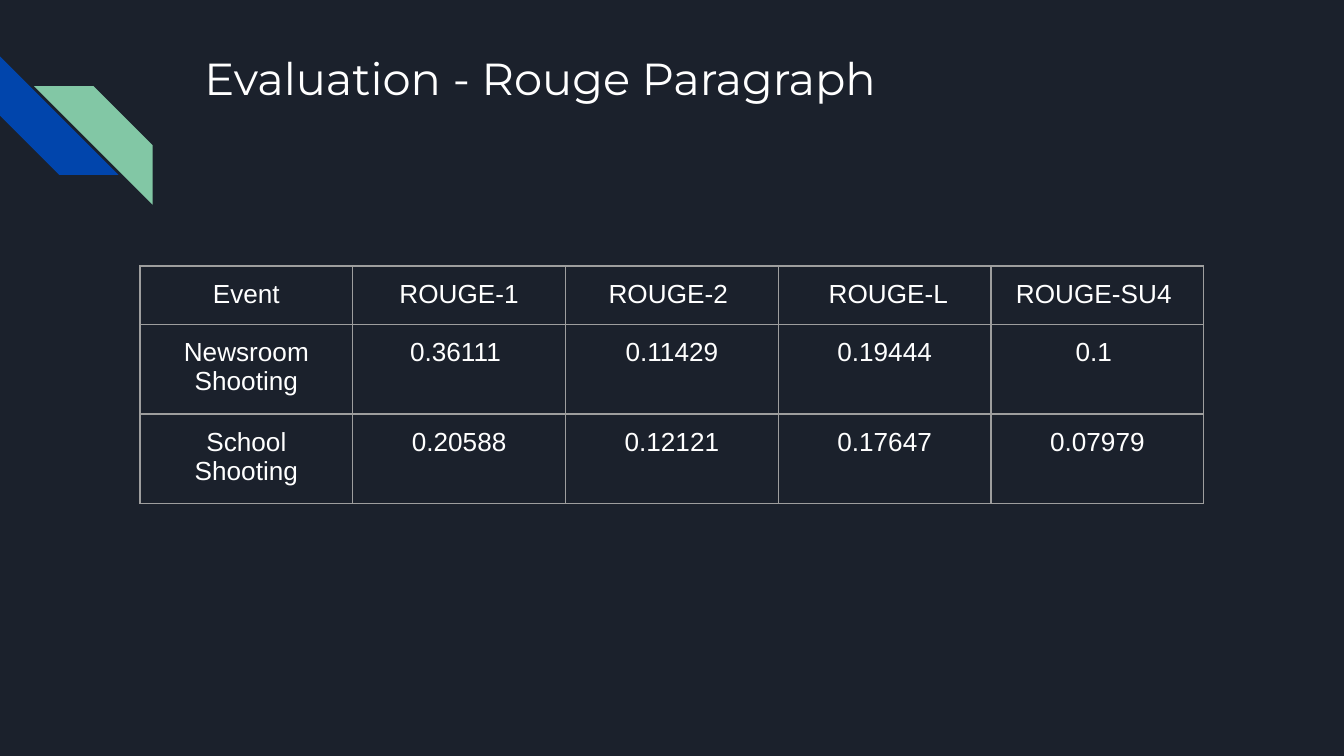
from dataclasses import dataclass

from lxml import etree
from pptx import Presentation
from pptx.dml.color import RGBColor
from pptx.enum.shapes import MSO_SHAPE
from pptx.enum.text import MSO_ANCHOR, PP_ALIGN
from pptx.oxml.ns import qn
from pptx.util import Pt

STRIPE = MSO_SHAPE.DIAGONAL_STRIPE
TOP = MSO_ANCHOR.TOP
LEFT, CENTER = PP_ALIGN.LEFT, PP_ALIGN.CENTER
BLANK_LAYOUT = 6


@dataclass(frozen=True)
class Theme:
    background: str = "1B212C"
    text: str = "FFFFFF"
    blue: str = "0145AC"
    green: str = "82C7A5"
    border: str = "9E9E9E"
    border_width: float = 0.75
    title_font: str = "Montserrat"
    body_font: str = "Arial"
    title_size: float = 24
    body_size: float = 14
    inset: float = 7.2


THEME = Theme()

SCORES = [
    ["Event", "ROUGE-1", "ROUGE-2 ", " ROUGE-L", "ROUGE-SU4 "],
    ["Newsroom Shooting", "0.36111 ", "0.11429", "0.19444", "0.1 "],
    ["School Shooting", "0.20588", "0.12121", "0.17647", "0.07979"],
]


def write_text(tf, text, font, size, color=THEME.text, align=LEFT):
    tf.word_wrap = True
    p = tf.paragraphs[0]
    p.alignment = align
    r = p.add_run()
    r.text = text
    r.font.name = font
    r.font.size = Pt(size)
    r.font.color.rgb = RGBColor.from_string(color)


def set_insets(box):
    """Give a text frame or a table cell the same margin on all sides."""
    box.margin_left = box.margin_right = Pt(THEME.inset)
    box.margin_top = box.margin_bottom = Pt(THEME.inset)


def add_stripe(slide, left, top, size, rotation, color):
    sp = slide.shapes.add_shape(STRIPE, Pt(left), Pt(top), Pt(size), Pt(size))
    sp.adjustments[0] = 0.5
    sp.rotation = rotation
    sp.shadow.inherit = False
    sp.fill.solid()
    sp.fill.fore_color.rgb = RGBColor.from_string(color)
    sp.line.fill.background()


def add_corner_stripes(slide, left, top, size):
    add_stripe(slide, left, top, size, 270, THEME.blue)
    add_stripe(slide, left + 18.3, top + 16, size, 90, THEME.green)


def add_title(slide, text, left, top, width, height):
    sp = slide.shapes.add_textbox(Pt(left), Pt(top), Pt(width), Pt(height))
    tf = sp.text_frame
    tf.vertical_anchor = TOP
    set_insets(tf)
    write_text(tf, text, THEME.title_font, THEME.title_size)


def set_borders(cell):
    tc_pr = cell._tc.get_or_add_tcPr()
    for i, side in enumerate(("lnL", "lnR", "lnT", "lnB")):
        ln = etree.Element(qn(f"a:{side}"), w=str(Pt(THEME.border_width)))
        fill = etree.SubElement(ln, qn("a:solidFill"))
        etree.SubElement(fill, qn("a:srgbClr"), val=THEME.border)
        tc_pr.insert(i, ln)


def add_score_table(slide, rows, left, top, width, row_height):
    n_rows, n_cols = len(rows), len(rows[0])
    table = slide.shapes.add_table(
        n_rows, n_cols, Pt(left), Pt(top), Pt(width), Pt(row_height * n_rows)
    ).table
    table.first_row = table.horz_banding = False
    for column in table.columns:
        column.width = Pt(width / n_cols)
    for row, texts in zip(table.rows, rows):
        row.height = Pt(row_height)
        for cell, text in zip(row.cells, texts):
            cell.fill.background()
            cell.vertical_anchor = TOP
            set_insets(cell)
            set_borders(cell)
            write_text(cell.text_frame, text, THEME.body_font,
                       THEME.body_size, align=CENTER)


def main():
    prs = Presentation()
    prs.slide_width, prs.slide_height = Pt(720), Pt(405)
    slide = prs.slides.add_slide(prs.slide_layouts[BLANK_LAYOUT])
    fill = slide.background.fill
    fill.solid()
    fill.fore_color.rgb = RGBColor.from_string(THEME.background)

    add_corner_stripes(slide, 0, 30.2, 63.5)
    add_title(slide, "Evaluation - Rouge Paragraph", 102.4, 20, 554.4, 72)
    add_score_table(slide, SCORES, 75, 142.5, 570, 30.2)
    prs.save("out.pptx")


if __name__ == "__main__":
    main()
